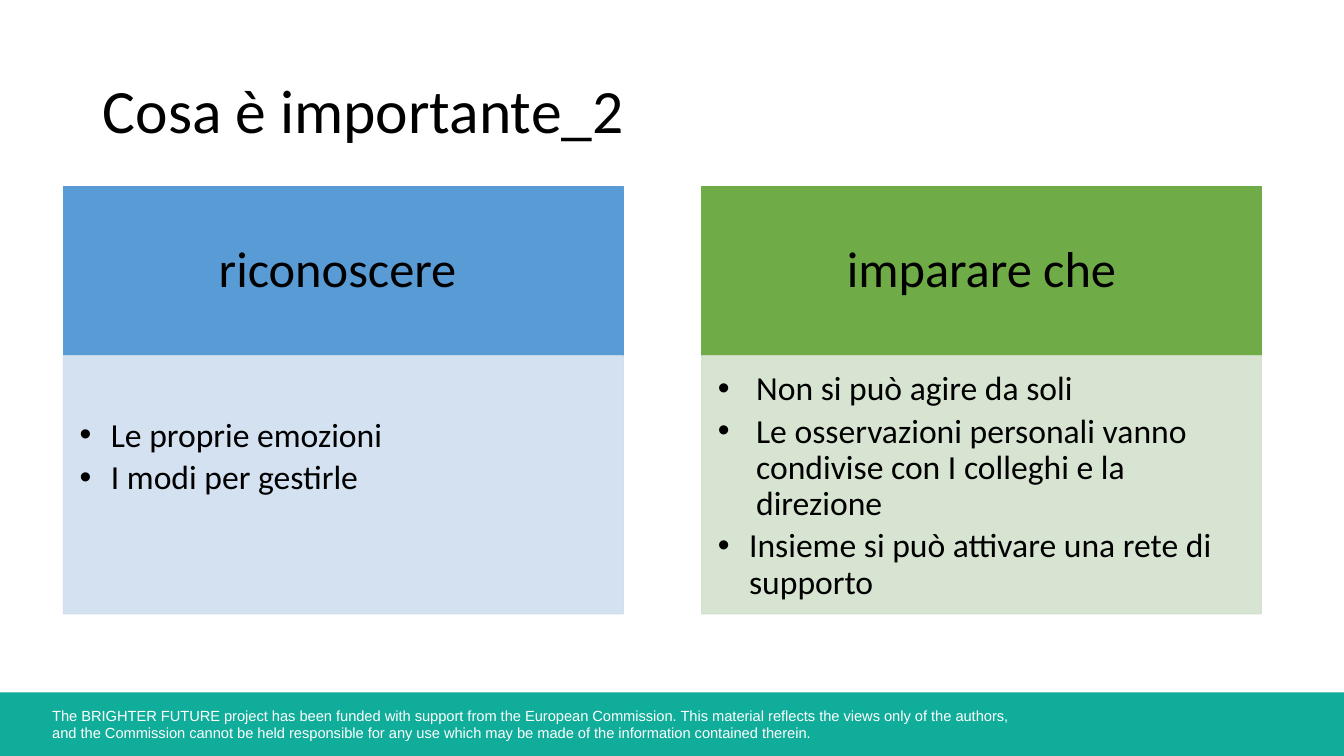
from lxml.etree import SubElement
from pptx import Presentation
from pptx.dml.color import RGBColor
from pptx.enum.shapes import MSO_SHAPE
from pptx.enum.text import MSO_ANCHOR, PP_ALIGN
from pptx.oxml.ns import qn
from pptx.util import Inches, Pt

BLACK = RGBColor(0x00, 0x00, 0x00)
WHITE = RGBColor(0xFF, 0xFF, 0xFF)
TEAL = RGBColor(0x10, 0xAD, 0x9A)
BLUE = RGBColor(0x59, 0x9B, 0xD5)
PALE_BLUE = RGBColor(0xCF, 0xDE, 0xEF)
GREEN = RGBColor(0x6F, 0xAB, 0x46)
PALE_GREEN = RGBColor(0xD3, 0xE1, 0xCC)

SLIDE_WIDTH, SLIDE_HEIGHT = 13.33, 7.5
COLUMN_LEFT, COLUMN_STEP, COLUMN_WIDTH = 0.63, 6.33, 5.55
HEADER_TOP, HEADER_HEIGHT, LIST_HEIGHT = 1.85, 1.68, 2.56
FOOTER_TOP = 6.87

DISCLAIMER = [
    "The BRIGHTER FUTURE project has been funded with support from the European Commission. "
    "This material reflects the views only of the authors,",
    "and the Commission cannot be held responsible for any use which may be made of the "
    "information contained therein.",
]

# Header, header colour, list colour, list top inset, (item, hanging indent) pairs
COLUMNS = [
    ("riconoscere\N{NO-BREAK SPACE}", BLUE, PALE_BLUE, 0.62,
     [("Le proprie emozioni", 0.31), ("I modi per gestirle", 0.31)]),
    ("imparare che", GREEN, PALE_GREEN, 0.16,
     [("Non si può agire da soli", 0.38),
      ("Le osservazioni personali vanno condivise con I colleghi e la direzione", 0.38),
      ("Insieme si può attivare una rete di supporto", 0.31)]),
]


def add_bullet(paragraph, indent):
    properties = paragraph._p.get_or_add_pPr()
    properties.set("marL", str(Inches(indent)))
    properties.set("indent", str(-Inches(indent)))
    bullet_colour = SubElement(properties, qn("a:buClr"))
    SubElement(bullet_colour, qn("a:srgbClr"), val=str(BLACK))
    SubElement(properties, qn("a:buFont"), typeface="Arial")
    SubElement(properties, qn("a:buChar"), char="•")


def write_text(shape, lines, size, font="Calibri", color=BLACK, align=PP_ALIGN.LEFT,
               anchor=MSO_ANCHOR.TOP, insets=(0.1, 0.05, 0.1, 0.05), spacing=0.9,
               space_before=0, indents=()):
    """Fill a shape with one paragraph per line; indents turn the lines into bullets."""
    frame = shape.text_frame
    frame.word_wrap = True
    frame.vertical_anchor = anchor
    (frame.margin_left, frame.margin_top,
     frame.margin_right, frame.margin_bottom) = map(Inches, insets)
    for index, line in enumerate(lines):
        paragraph = frame.add_paragraph() if index else frame.paragraphs[0]
        if indents:
            add_bullet(paragraph, indents[index])
        paragraph.alignment = align
        paragraph.line_spacing = spacing
        paragraph.space_before = Pt(space_before if index else 0)
        run = paragraph.add_run()
        run.text = line
        run.font.size = Pt(size)
        run.font.name = font
        run.font.color.rgb = color


def add_panel(slide, left, top, width, height, color, opacity=100):
    panel = slide.shapes.add_shape(MSO_SHAPE.RECTANGLE, Inches(left), Inches(top),
                                   Inches(width), Inches(height))
    panel.shadow.inherit = False
    panel.fill.solid()
    panel.fill.fore_color.rgb = color
    panel.line.color.rgb = color
    panel.line.width = Pt(1)
    if opacity < 100:
        for tint in panel._element.spPr.iter(qn("a:srgbClr")):
            SubElement(tint, qn("a:alpha"), val=str(opacity * 1000))
    return panel


def add_title(slide, text):
    title = slide.shapes.title
    title.left, title.top = Inches(0.92), Inches(0.4)
    title.width, title.height = Inches(11.5), Inches(1.45)
    write_text(title, [text], size=44, anchor=MSO_ANCHOR.MIDDLE)


def add_column(slide, left, heading, header_color, list_color, list_inset, items):
    header = add_panel(slide, left, HEADER_TOP, COLUMN_WIDTH, HEADER_HEIGHT, header_color)
    write_text(header, [heading], size=36, align=PP_ALIGN.CENTER,
               anchor=MSO_ANCHOR.MIDDLE, insets=(0.35, 0.2, 0.35, 0.2))
    item_panel = add_panel(slide, left, HEADER_TOP + HEADER_HEIGHT, COLUMN_WIDTH,
                           LIST_HEIGHT, list_color, opacity=89)
    lines, indents = zip(*items)
    write_text(item_panel, lines, size=24, insets=(0.16, list_inset, 0.22, 0.24),
               space_before=4.2, indents=indents)


def add_footer(slide):
    band = add_panel(slide, 0, FOOTER_TOP, SLIDE_WIDTH, SLIDE_HEIGHT - FOOTER_TOP, TEAL)
    band.line.fill.background()
    disclaimer = slide.shapes.add_textbox(Inches(0.42), Inches(6.96), Inches(10), Inches(0.45))
    write_text(disclaimer, DISCLAIMER, size=10.5, font="Arial", color=WHITE, spacing=1.0)


def main():
    presentation = Presentation()
    presentation.slide_width = Inches(SLIDE_WIDTH)
    presentation.slide_height = Inches(SLIDE_HEIGHT)
    slide = presentation.slides.add_slide(presentation.slide_layouts[5])
    add_footer(slide)
    add_title(slide, "Cosa è importante_2")
    for index, column in enumerate(COLUMNS):
        add_column(slide, COLUMN_LEFT + index * COLUMN_STEP, *column)
    presentation.save("out.pptx")


if __name__ == "__main__":
    main()
